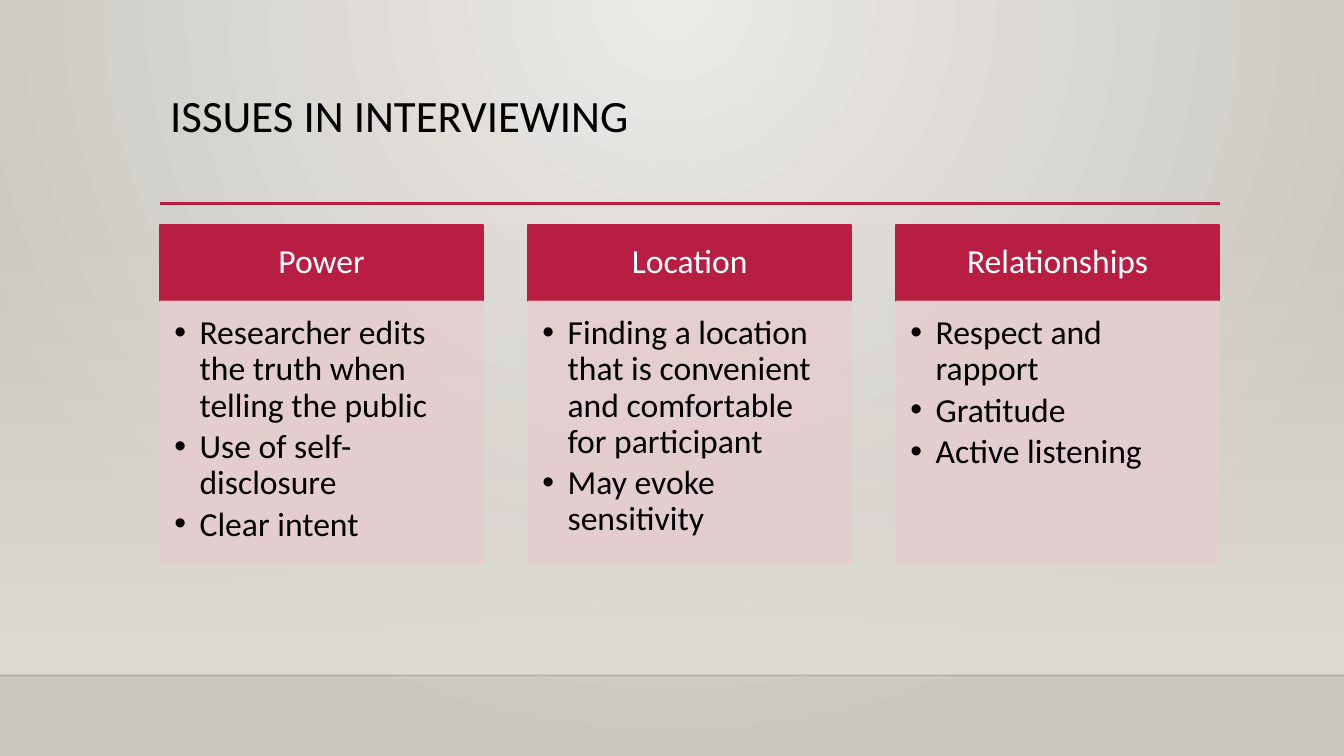
from lxml.etree import SubElement
from pptx import Presentation
from pptx.dml.color import RGBColor
from pptx.enum.shapes import MSO_CONNECTOR, MSO_SHAPE
from pptx.enum.text import MSO_ANCHOR, PP_ALIGN
from pptx.oxml.ns import qn
from pptx.util import Inches, Pt

# Content
TITLE = "ISSUES IN INTERVIEWING"
COLUMNS = [
    ("Power", ["Researcher edits the truth when telling the public",
               "Use of self-disclosure", "Clear intent"]),
    ("Location", ["Finding a location that is convenient and comfortable for participant",
                  "May evoke sensitivity"]),
    ("Relationships", ["Respect and rapport", "Gratitude", "Active listening"]),
]

# Style and layout, in inches
FONT = "Calibri"
RED, PINK, BLACK, WHITE = "B71E42", "E6CDCF", "000000", "FFFFFF"
WIDTH, HEIGHT = 13.33, 7.5
LEFT, COL_W, COL_STEP = 1.59, 3.2, 3.65
HEAD_TOP, HEAD_H, BODY_H = 2.23, 0.76, 2.59
FLOOR = 6.7


def paint(color, value, alpha=100):
    color.rgb = RGBColor.from_string(value)
    if alpha < 100:
        clr = color._xFill.find(qn("a:srgbClr"))
        SubElement(clr, qn("a:alpha"), val=str(alpha * 1000))


def paint_stops(fill, values):
    fill.gradient()
    for stop, value in zip(fill.gradient_stops, values):
        stop.color.rgb = RGBColor.from_string(value)


def add_rect(x, y, w, h, color=None, alpha=100):
    sp = s.shapes.add_shape(MSO_SHAPE.RECTANGLE, Inches(x), Inches(y), Inches(w), Inches(h))
    sp.shadow.inherit = False
    if color is None:
        sp.line.fill.background()
        return sp
    sp.fill.solid()
    sp.line.fill.solid()
    sp.line.width = Pt(1.25)
    for fore in (sp.fill.fore_color, sp.line.color):
        fore.rgb = RGBColor.from_string(color)
    if alpha < 100:
        set_alpha(sp, alpha)
    return sp


def set_alpha(shape, alpha):
    for clr in shape._element.spPr.iter(qn("a:srgbClr")):
        SubElement(clr, qn("a:alpha"), val=str(alpha * 1000))


def add_rule(x1, x2, y, color, width):
    line = s.shapes.add_connector(MSO_CONNECTOR.STRAIGHT, Inches(x1), Inches(y),
                                  Inches(x2), Inches(y))
    line.line.color.rgb = RGBColor.from_string(color)
    line.line.width = Pt(width)
    SubElement(line._element.spPr, qn("a:effectLst"))
    return line


def write(sp, lines, size=24, color=BLACK, align=PP_ALIGN.LEFT, anchor=MSO_ANCHOR.TOP,
          insets=(0.1, 0.05, 0.1, 0.05), bullet=False, after=0):
    tf = sp.text_frame
    tf.word_wrap = True
    tf.vertical_anchor = anchor
    tf.margin_left, tf.margin_top, tf.margin_right, tf.margin_bottom = map(Inches, insets)
    for i, line in enumerate(lines):
        p = tf.paragraphs[0] if i == 0 else tf.add_paragraph()
        if bullet:
            pPr = p._p.get_or_add_pPr()
            pPr.set("marL", str(Inches(0.25)))
            pPr.set("indent", str(-Inches(0.25)))
            SubElement(pPr, qn("a:buFont"), typeface="Arial")
            SubElement(pPr, qn("a:buChar"), char="•")
        p.alignment = align
        p.line_spacing = 0.9
        p.space_after = Pt(after)
        r = p.add_run()
        r.text = line
        r.font.name = FONT
        r.font.size = Pt(size)
        r.font.color.rgb = RGBColor.from_string(color)


prs = Presentation()
prs.slide_width, prs.slide_height = Inches(WIDTH), Inches(HEIGHT)
s = prs.slides.add_slide(prs.slide_layouts[6])

# Background: circular gradient centred on the top edge
paint_stops(s.background.fill, ("ECEAE7", "CAC7C1"))
grad = s._element.find(".//" + qn("a:gradFill"))
grad.remove(grad.find(qn("a:lin")))
circle = SubElement(grad, qn("a:path"), path="circle")
SubElement(circle, qn("a:fillToRect"), l="43000", t="0", r="43000", b="100000")

# Wall fading in towards the floor line
wall = add_rect(0, 2.21, WIDTH, FLOOR - 2.21)
paint_stops(wall.fill, ("DFDBD5", "DFDBD5"))
wall.fill.gradient_angle = 270
SubElement(wall._element.spPr.find(".//" + qn("a:srgbClr")), qn("a:alpha"), val="0")
set_alpha(add_rule(0, WIDTH, FLOOR, "000001", 1), 20)

# Title and rule
add_rule(LEFT, 12.1, 2.02, RED, 2.5)
title = s.shapes.add_textbox(Inches(LEFT), Inches(0.88), Inches(10.5), Inches(1.15))
write(title, [TITLE], size=32)

# Columns
for i, (heading, points) in enumerate(COLUMNS):
    x = LEFT + i * COL_STEP
    head = add_rect(x, HEAD_TOP, COL_W, HEAD_H, RED)
    write(head, [heading], color=WHITE, align=PP_ALIGN.CENTER, anchor=MSO_ANCHOR.MIDDLE,
          insets=(0.19, 0.11, 0.19, 0.11))
    body = add_rect(x, HEAD_TOP + HEAD_H, COL_W, BODY_H, PINK, alpha=90)
    write(body, points, insets=(0.14, 0.14, 0.19, 0.21), bullet=True, after=3.6)

prs.save("out.pptx")
